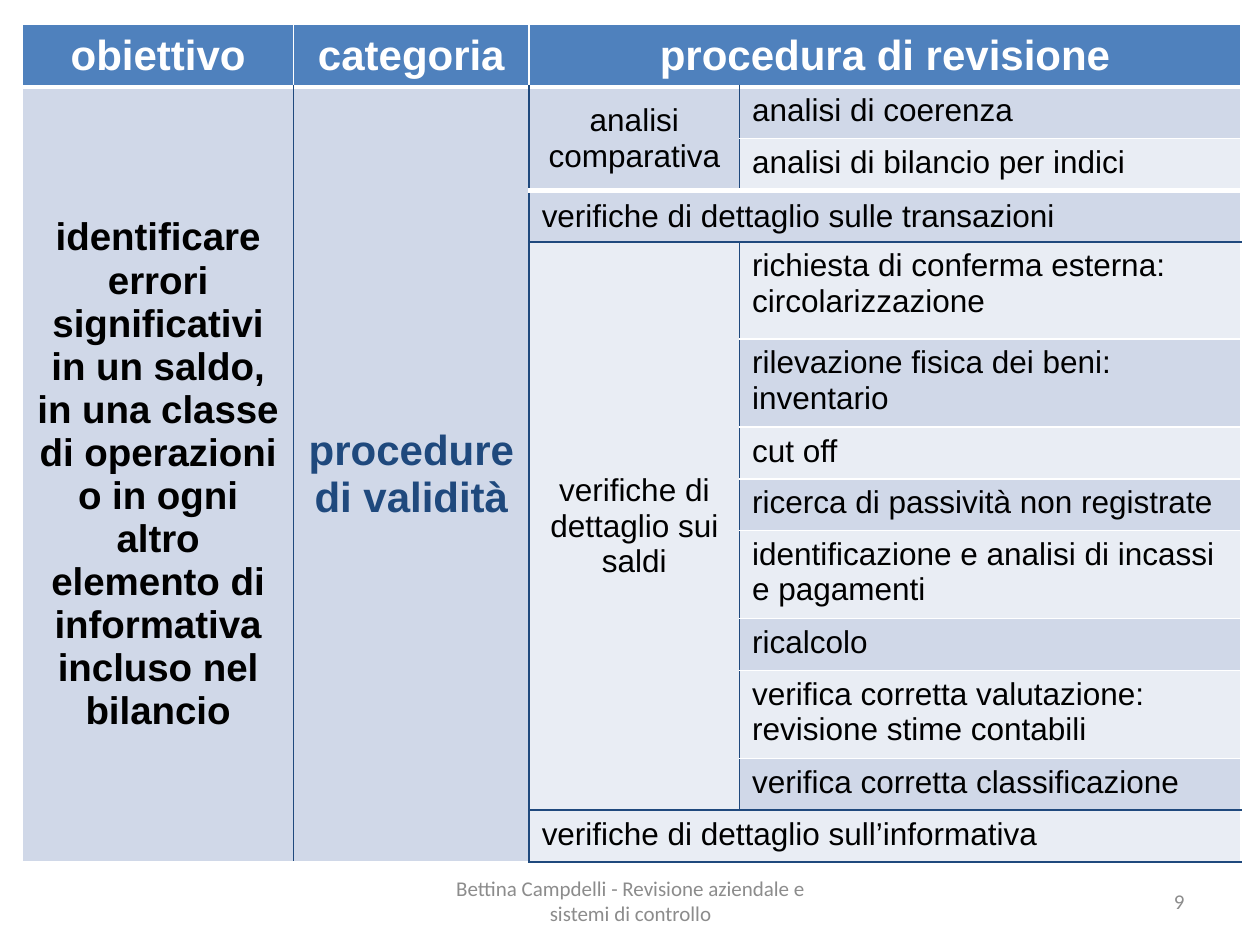
from dataclasses import dataclass

from lxml import etree
from pptx import Presentation
from pptx.dml.color import RGBColor
from pptx.enum.text import MSO_ANCHOR, PP_ALIGN
from pptx.oxml.ns import qn
from pptx.util import Inches, Pt

LEFT, CENTER, RIGHT, JUSTIFY = PP_ALIGN.LEFT, PP_ALIGN.CENTER, PP_ALIGN.RIGHT, PP_ALIGN.JUSTIFY
TOP, MIDDLE = MSO_ANCHOR.TOP, MSO_ANCHOR.MIDDLE


@dataclass(frozen=True)
class Theme:
    white: str = "FFFFFF"
    black: str = "000000"
    navy: str = "1F497D"
    header: str = "4F81BD"
    bands: tuple = ("E9EDF4", "D0D8E8")
    grey: str = "8C8C8C"
    body_font: str = "Arial"
    footer_font: str = "Calibri"
    heading_size: int = 24
    objective_size: int = 22
    body_size: int = 18
    footer_size: int = 12


THEME = Theme()
COLUMN_WIDTHS = [2.15, 1.87, 1.67, 3.98]
HEADER_HEIGHT, SINGLE_HEIGHT, DOUBLE_HEIGHT = 0.46, 0.41, 0.66
ROW_HEIGHTS = [HEADER_HEIGHT] + [SINGLE_HEIGHT] * 12
ROW_HEIGHTS[4] = 0.77
for double_row in (5, 8, 10):
    ROW_HEIGHTS[double_row] = DOUBLE_HEIGHT
SECTION_EDGES = {3, 4, 12, 13}
PROCEDURE_COLUMN, DETAIL_COLUMN = 2, 3

HEADINGS = [(0, 1, "obiettivo"), (1, 1, "categoria"), (2, 2, "procedura di revisione")]
OBJECTIVE = ("identificare errori significativi in un saldo, in una classe di operazioni "
             "o in ogni altro elemento di informativa incluso nel bilancio")
GROUPS = [(1, 2, "analisi comparativa"), (4, 8, "verifiche di dettaglio sui saldi")]
DETAILS = {
    1: ["analisi di coerenza", "analisi di bilancio per indici"],
    4: ["richiesta di conferma esterna: circolarizzazione",
        "rilevazione fisica dei beni: inventario",
        "cut off",
        "ricerca di passività non registrate",
        "identificazione e analisi di incassi e pagamenti",
        "ricalcolo",
        "verifica corretta valutazione: revisione stime contabili",
        "verifica corretta classificazione"],
}


def write_text(frame, text, font=THEME.body_font, size=THEME.body_size,
               color=THEME.black, bold=False, align=LEFT):
    """Write one formatted paragraph into a text frame."""
    frame.word_wrap = True
    paragraph = frame.paragraphs[0]
    paragraph.alignment = align
    run = paragraph.add_run()
    run.text = text
    run.font.name = font
    run.font.size = Pt(size)
    run.font.bold = bold
    run.font.color.rgb = RGBColor.from_string(color)


def horizontal_line(edge, column):
    """Return colour and width of the rule at a row edge."""
    if edge == 1:
        return THEME.white, 3
    is_section = column >= PROCEDURE_COLUMN and edge in SECTION_EDGES
    return (THEME.navy if is_section else THEME.white), 1


def vertical_line(edge, row):
    """Return colour and width of the rule at a column edge."""
    is_inner = row > 0 and 0 < edge < len(COLUMN_WIDTHS)
    return (THEME.navy if is_inner else THEME.white), 1


def draw_border(cell, tag, color, width):
    """Add one border line to a table cell."""
    properties = cell._tc.get_or_add_tcPr()
    line = etree.SubElement(properties, qn(tag), w=str(Pt(width)))
    fill = etree.SubElement(line, qn("a:solidFill"))
    etree.SubElement(fill, qn("a:srgbClr"), val=color)


class SlideBuilder:
    """Hold the theme and the current slide."""

    def __init__(self, presentation, theme):
        """Add a blank slide."""
        self.theme = theme
        self.slide = presentation.slides.add_slide(presentation.slide_layouts[6])
        self.table = None

    def add_footer(self, text, left, width, align):
        """Add a text box on the footer line."""
        box = self.slide.shapes.add_textbox(Inches(left), Inches(6.95), Inches(width), Inches(0.4))
        box.text_frame.vertical_anchor = MIDDLE
        write_text(box.text_frame, text, font=self.theme.footer_font,
                   size=self.theme.footer_size, color=self.theme.grey, align=align)

    def add_table(self, left, top):
        """Add the empty table with its row and column sizes."""
        shape = self.slide.shapes.add_table(
            len(ROW_HEIGHTS), len(COLUMN_WIDTHS), Inches(left), Inches(top),
            Inches(sum(COLUMN_WIDTHS)), Inches(sum(ROW_HEIGHTS)))
        self.table = shape.table
        self.table.first_row = False
        self.table.horz_banding = False
        for column, width in zip(self.table.columns, COLUMN_WIDTHS):
            column.width = Inches(width)
        for row, height in zip(self.table.rows, ROW_HEIGHTS):
            row.height = Inches(height)

    def add_cell(self, row, column, text, rows=1, columns=1, anchor=MIDDLE, **text_format):
        """Fill a cell, merged over its span, with text, colour and borders."""
        bottom, right = row + rows, column + columns
        fill = self.theme.bands[row % 2] if row else self.theme.header
        cell = self.table.cell(row, column)
        if rows * columns > 1:
            cell.merge(self.table.cell(bottom - 1, right - 1))
        for r in range(row, bottom):
            for c in range(column, right):
                part = self.table.cell(r, c)
                if c == column:
                    draw_border(part, "a:lnL", *vertical_line(c, r))
                if c == right - 1:
                    draw_border(part, "a:lnR", *vertical_line(c + 1, r))
                if r == row:
                    draw_border(part, "a:lnT", *horizontal_line(r, c))
                if r == bottom - 1:
                    draw_border(part, "a:lnB", *horizontal_line(r + 1, c))
                part.fill.solid()
                part.fill.fore_color.rgb = RGBColor.from_string(fill)
        cell.vertical_anchor = anchor
        write_text(cell.text_frame, text, **text_format)


def main():
    """Build and save the slide."""
    presentation = Presentation()
    presentation.slide_width = Inches(10)
    presentation.slide_height = Inches(7.5)
    builder = SlideBuilder(presentation, THEME)
    builder.add_footer("Bettina Campdelli - Revisione aziendale e sistemi di controllo",
                       3.42, 3.17, CENTER)
    builder.add_footer("9", 7.17, 2.33, RIGHT)

    builder.add_table(0.18, 0.19)
    for column, columns, text in HEADINGS:
        builder.add_cell(0, column, text, columns=columns, size=THEME.heading_size,
                         color=THEME.white, bold=True, align=CENTER)
    builder.add_cell(1, 0, OBJECTIVE, rows=12, size=THEME.objective_size, bold=True, align=CENTER)
    builder.add_cell(1, 1, "procedure di validità", rows=12, size=THEME.heading_size,
                     color=THEME.navy, bold=True, align=CENTER)
    for row, rows, text in GROUPS:
        builder.add_cell(row, PROCEDURE_COLUMN, text, rows=rows, align=CENTER)
        for detail_row, detail in enumerate(DETAILS[row], row):
            builder.add_cell(detail_row, DETAIL_COLUMN, detail, anchor=TOP)
    builder.add_cell(3, PROCEDURE_COLUMN, "verifiche di dettaglio sulle transazioni",
                     columns=2, align=JUSTIFY)
    builder.add_cell(12, PROCEDURE_COLUMN, "verifiche di dettaglio sull’informativa",
                     columns=2, anchor=TOP)
    presentation.save("out.pptx")


if __name__ == "__main__":
    main()
